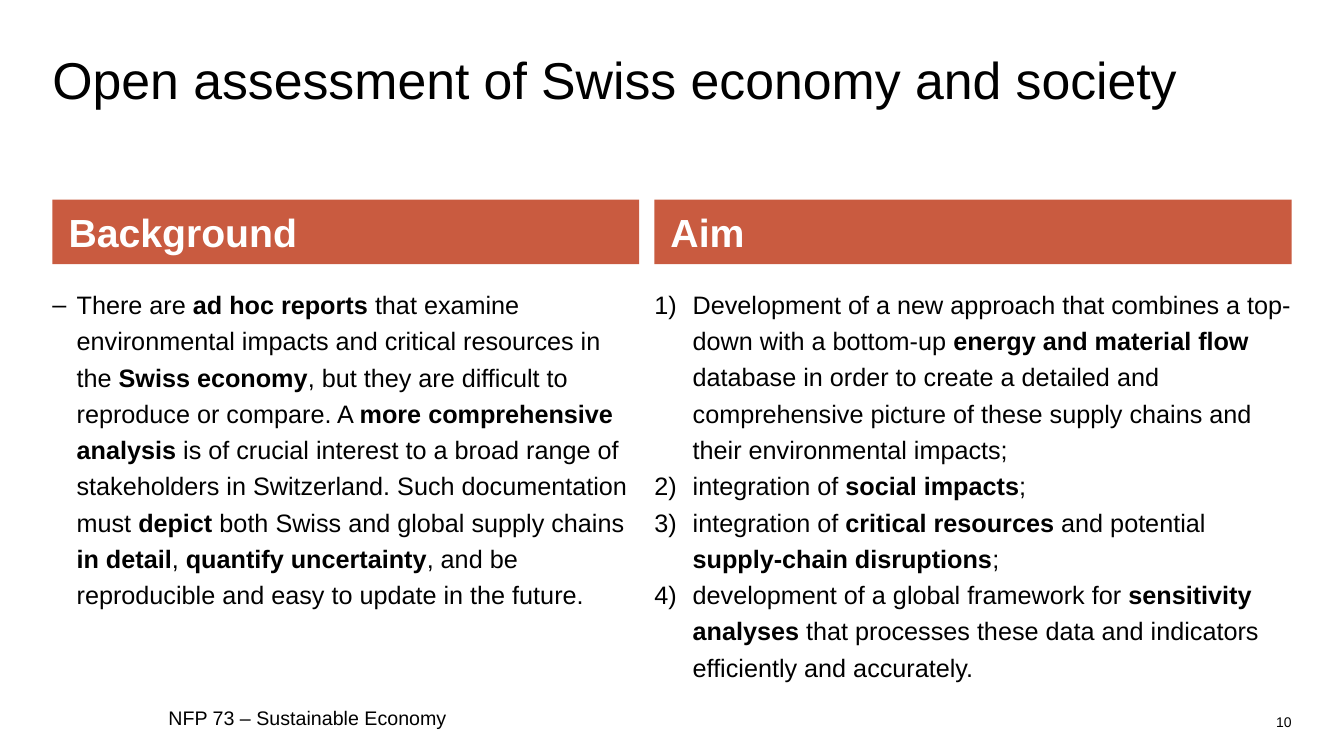
from lxml.etree import SubElement
from pptx import Presentation
from pptx.dml.color import RGBColor
from pptx.enum.shapes import MSO_SHAPE
from pptx.enum.text import MSO_ANCHOR, MSO_AUTO_SIZE, PP_ALIGN
from pptx.oxml.ns import qn
from pptx.util import Inches, Pt

FONT, BLACK, WHITE, RUST = "Arial", "000000", "FFFFFF", "C95B40"
DASH = ("a:buChar", {"char": "–"})
NUMBER = ("a:buAutoNum", {"type": "arabicParenR"})

# Asterisks enclose the bold words.
BACKGROUND = [
    "There are *ad hoc reports *that examine environmental impacts and critical "
    "resources in the *Swiss economy*, but they are difficult to reproduce or compare. "
    "A *more comprehensive analysis *is of crucial interest to a broad range of "
    "stakeholders in Switzerland. Such documentation must *depict *both Swiss and "
    "global supply chains* in detail*, *quantify uncertainty*, and be reproducible "
    "and easy to update in the future.",
]
AIMS = [
    "Development of a new approach that combines a top-down with a bottom-up "
    "*energy and material flow *database in order to create a detailed and "
    "comprehensive picture of these supply chains and their environmental impacts;",
    "integration of *social impacts*;",
    "integration of *critical resources *and potential *supply-chain disruptions*;",
    "development of a global framework for *sensitivity analyses *that processes "
    "these data and indicators efficiently and accurately.",
]
COLUMNS = [
    # heading, left, width, body height, bullet, indent, paragraphs
    ("Background", 0.52, 5.82, 3.78, DASH, 0.24, BACKGROUND),
    ("Aim", 6.49, 6.32, 3.57, NUMBER, 0.38, AIMS),
]


def rgb(color):
    return RGBColor.from_string(color)


def set_frame(tf, anchor=MSO_ANCHOR.TOP, left=0, top=0, right=0):
    tf.word_wrap = True
    tf.auto_size = MSO_AUTO_SIZE.NONE
    tf.vertical_anchor = anchor
    tf.margin_left, tf.margin_top = Inches(left), Inches(top)
    tf.margin_right, tf.margin_bottom = Inches(right), Inches(0)


def add_run(p, text, size, color=BLACK, bold=False):
    r = p.add_run()
    r.text = text
    r.font.name, r.font.size, r.font.bold = FONT, Pt(size), bold
    r.font.color.rgb = rgb(color)


def add_text(s, x, y, w, h, anchor=MSO_ANCHOR.TOP):
    """Add an empty text box without margins and return its text frame."""
    tf = s.shapes.add_textbox(Inches(x), Inches(y), Inches(w), Inches(h)).text_frame
    set_frame(tf, anchor)
    return tf


def set_title(s, text):
    title = s.shapes.title
    title.left, title.top = Inches(0.52), Inches(0.52)
    title.width, title.height = Inches(12.28), Inches(1.14)
    set_frame(title.text_frame, top=0.02)
    p = title.text_frame.paragraphs[0]
    p.alignment, p.line_spacing = PP_ALIGN.LEFT, 0.9
    add_run(p, text, 37)


def add_heading(s, text, x, w):
    bar = s.shapes.add_shape(MSO_SHAPE.RECTANGLE, Inches(x), Inches(1.98),
                             Inches(w), Inches(0.64))
    bar.shadow.inherit = False
    bar.fill.solid()
    bar.fill.fore_color.rgb = rgb(RUST)
    bar.line.fill.background()
    set_frame(bar.text_frame, MSO_ANCHOR.MIDDLE, left=0.16, right=0.08)
    p = bar.text_frame.paragraphs[0]
    p.alignment = PP_ALIGN.LEFT
    add_run(p, text, 28, WHITE, bold=True)


def set_bullet(p, bullet, indent):
    tag, attributes = bullet
    pPr = p._p.get_or_add_pPr()
    pPr.set("marL", str(Inches(indent)))
    pPr.set("indent", str(-Inches(indent)))
    SubElement(pPr, qn("a:buFont"), typeface=FONT)
    SubElement(pPr, qn(tag), attributes)


def add_list(s, x, w, h, bullet, indent, paragraphs):
    tf = add_text(s, x, 2.81, w, h)
    for i, text in enumerate(paragraphs):
        p = tf.add_paragraph() if i else tf.paragraphs[0]
        set_bullet(p, bullet, indent)
        p.line_spacing = 1.2
        for j, part in enumerate(text.split("*")):
            add_run(p, part, 18, bold=j % 2 == 1)


def main():
    prs = Presentation()
    prs.slide_width, prs.slide_height = Inches(13.33), Inches(7.5)
    s = prs.slides.add_slide(prs.slide_layouts[5])
    set_title(s, "Open assessment of Swiss economy and society")
    for heading, x, w, h, bullet, indent, paragraphs in COLUMNS:
        add_heading(s, heading, x, w)
        add_list(s, x, w, h, bullet, indent, paragraphs)
    footer = add_text(s, 1.67, 6.98, 4.5, 0.28, MSO_ANCHOR.MIDDLE)
    add_run(footer.paragraphs[0], "NFP 73 – Sustainable Economy", 14)
    p = add_text(s, 9.03, 7.08, 3.78, 0.2).paragraphs[0]
    p.alignment = PP_ALIGN.RIGHT
    add_run(p, "10", 10)
    prs.save("out.pptx")


if __name__ == "__main__":
    main()
